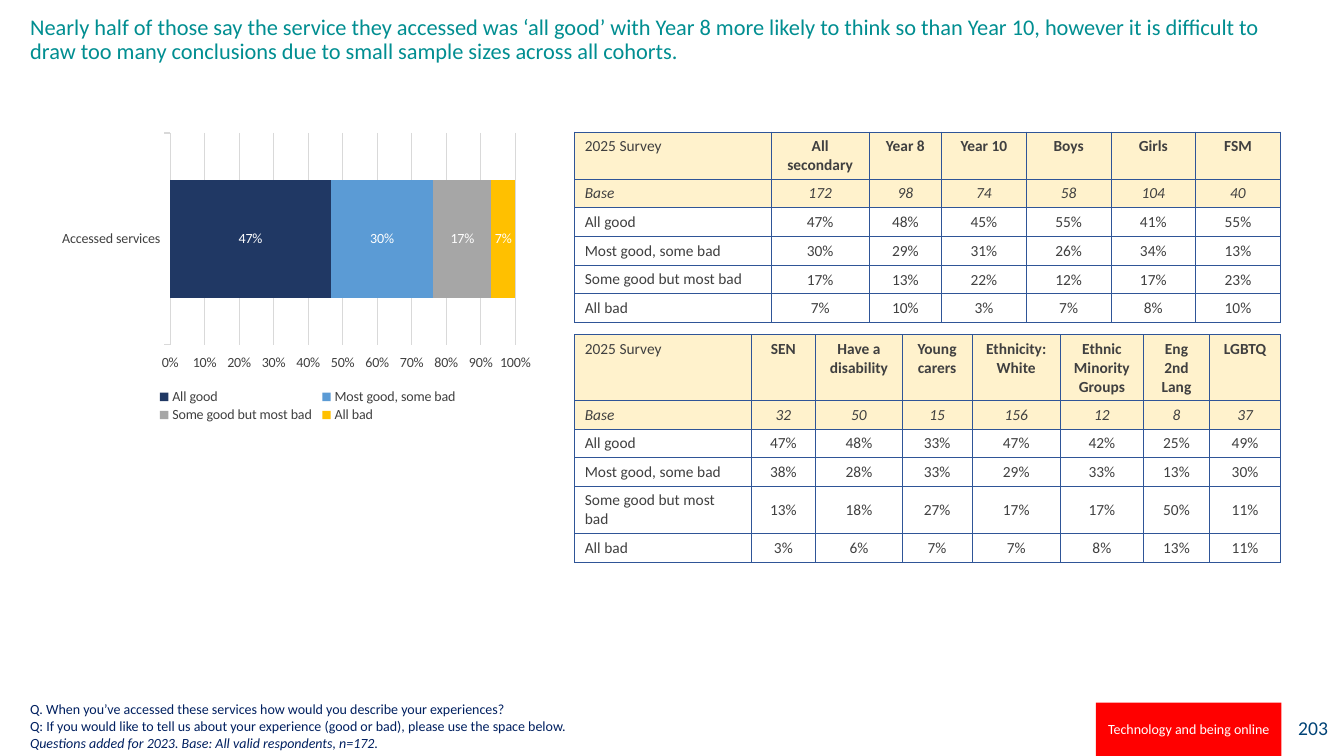
from lxml.etree import SubElement
from pptx import Presentation
from pptx.chart.data import CategoryChartData
from pptx.dml.color import RGBColor
from pptx.enum.chart import (XL_CHART_TYPE, XL_LABEL_POSITION,
                             XL_LEGEND_POSITION, XL_TICK_MARK)
from pptx.enum.shapes import MSO_SHAPE
from pptx.enum.text import MSO_ANCHOR, MSO_AUTO_SIZE, PP_ALIGN
from pptx.oxml.ns import qn
from pptx.util import Pt

PX = 9144  # EMU per px, at 100 px to the inch
FONT = "Calibri"
COLORS = {
    "title": "008E91", "note": "002060", "page": "004376", "text": "404040",
    "white": "FFFFFF", "section": "FF0000", "header": "FFF2CC",
    "border": "2F5597", "grid": "D9D9D9",
}
ANSWERS = {
    "All good": (0.47, "203864"),
    "Most good, some bad": (0.30, "5B9BD5"),
    "Some good but most bad": (0.17, "A6A6A6"),
    "All bad": (0.07, "FFC000"),
}
# Each group: heading, column width in px, base, then a percentage per answer
SCHOOL_GROUPS = [
    ("All secondary", 97, 172, 47, 30, 17, 7),
    ("Year 8", 72, 98, 48, 29, 13, 10),
    ("Year 10", 84, 74, 45, 31, 22, 3),
    ("Boys", 84, 58, 55, 26, 12, 7),
    ("Girls", 84, 104, 41, 34, 17, 8),
    ("FSM", 84, 40, 55, 13, 23, 10),
]
COHORT_GROUPS = [
    ("SEN", 64, 32, 47, 38, 13, 3),
    ("Have a disability", 86, 50, 48, 28, 18, 6),
    ("Young carers", 69, 15, 33, 33, 27, 7),
    ("Ethnicity: White", 88, 156, 47, 29, 17, 7),
    ("Ethnic Minority Groups", 82, 12, 42, 33, 17, 8),
    ("Eng 2nd Lang", 66, 8, 25, 13, 50, 13),
    ("LGBTQ", 70, 37, 49, 30, 11, 11),
]
ROW_HEIGHTS = [45, 27, 23, 23, 23, 23]


def box(*lengths):
    return [length * PX for length in lengths]


def rgb(name):
    return RGBColor.from_string(COLORS[name])


def style_font(font, size, color):
    font.name = FONT
    font.size = Pt(size)
    font.color.rgb = rgb(color)


def write(paragraph, text, size=11, color="text", bold=False, italic=False,
          align=PP_ALIGN.LEFT):
    paragraph.alignment = align
    run = paragraph.add_run()
    run.text = text
    style_font(run.font, size, color)
    run.font.bold = bold
    run.font.italic = italic


def add_title(slide, text):
    title = slide.shapes.title
    title.left, title.top, title.width, title.height = box(20, 11, 1270, 98)
    frame = title.text_frame
    frame.auto_size = MSO_AUTO_SIZE.NONE
    frame.vertical_anchor = MSO_ANCHOR.TOP
    frame.paragraphs[0].line_spacing = 0.9
    write(frame.paragraphs[0], text, size=16, color="title")


def add_label(slide, place, fill, text, **text_format):
    label = slide.shapes.add_shape(MSO_SHAPE.RECTANGLE, *box(*place))
    label.shadow.inherit = False
    label.fill.solid()
    label.fill.fore_color.rgb = rgb(fill)
    label.line.fill.background()
    label.text_frame.vertical_anchor = MSO_ANCHOR.MIDDLE
    write(label.text_frame.paragraphs[0], text, **text_format)


def add_notes(slide, place, notes):
    frame = slide.shapes.add_textbox(*box(*place)).text_frame
    frame.word_wrap = True
    frame.vertical_anchor = MSO_ANCHOR.BOTTOM
    for index, (text, italic) in enumerate(notes):
        paragraph = frame.add_paragraph() if index else frame.paragraphs[0]
        write(paragraph, text, size=10, color="note", italic=italic)


def set_layout(parent, index, x, y, w, h, target=None):
    """Give a plot area or legend a fixed place, as shares of the chart."""
    for old in parent.findall(qn("c:layout")):
        parent.remove(old)
    layout = SubElement(parent, qn("c:layout"))
    parent.insert(index, layout)
    manual = SubElement(layout, qn("c:manualLayout"))
    settings = {"layoutTarget": target} if target else {}
    settings |= {"xMode": "edge", "yMode": "edge", "x": x, "y": y, "w": w, "h": h}
    for tag, value in settings.items():
        SubElement(manual, qn(f"c:{tag}")).set("val", str(value))


def add_answer_chart(slide, place):
    data = CategoryChartData(number_format="0%")
    data.categories = ["Accessed services"]
    for answer, (share, _) in ANSWERS.items():
        data.add_series(answer, [share])
    chart = slide.shapes.add_chart(
        XL_CHART_TYPE.BAR_STACKED_100, *box(*place), data).chart
    style_font(chart.font, 10, "text")
    chart.has_title = False

    # Bars and their labels
    plot = chart.plots[0]
    plot.gap_width = 80
    plot.overlap = 100
    plot.vary_by_categories = False
    for series, (_, color) in zip(plot.series, ANSWERS.values()):
        series.format.fill.solid()
        series.format.fill.fore_color.rgb = RGBColor.from_string(color)
        labels = series.data_labels
        labels.show_value = True
        labels.number_format = "0%"
        labels.number_format_is_linked = False
        labels.position = XL_LABEL_POSITION.CENTER
        style_font(labels.font, 10, "white")

    # Axes
    shares, services = chart.value_axis, chart.category_axis
    shares.minimum_scale, shares.maximum_scale, shares.major_unit = 0, 1, 0.1
    shares.tick_labels.number_format = "0%"
    shares.tick_labels.number_format_is_linked = False
    shares.format.line.fill.background()
    for line in (shares.major_gridlines.format.line, services.format.line):
        line.color.rgb = rgb("grid")
        line.width = Pt(0.75)
    for axis in (shares, services):
        axis.major_tick_mark = XL_TICK_MARK.OUTSIDE
        style_font(axis.tick_labels.font, 10, "text")

    # Legend and plot area
    chart.has_legend = True
    legend = chart.legend
    legend.position = XL_LEGEND_POSITION.BOTTOM
    legend.include_in_layout = False
    style_font(legend.font, 10, "text")
    set_layout(legend._element, 1, 0.22, 0.86, 0.57, 0.13)
    plot_area = chart._chartSpace.chart.plotArea
    set_layout(plot_area, 0, 0.25, 0.01, 0.64, 0.71, target="inner")


def set_borders(cell):
    properties = cell._tc.get_or_add_tcPr()
    for index, side in enumerate(("lnL", "lnR", "lnT", "lnB")):
        line = SubElement(properties, qn(f"a:{side}"), w=str(Pt(0.5)))
        properties.insert(index, line)
        fill = SubElement(line, qn("a:solidFill"))
        SubElement(fill, qn("a:srgbClr"), val=COLORS["border"])


def add_survey_table(slide, place, label_width, groups):
    columns = [("2025 Survey", "Base", *ANSWERS)]
    for heading, _, base, *shares in groups:
        columns.append((heading, str(base), *(f"{share}%" for share in shares)))
    widths = [label_width] + [group[1] for group in groups]
    size = (sum(widths), sum(ROW_HEIGHTS))
    table = slide.shapes.add_table(
        len(ROW_HEIGHTS), len(columns), *box(*place, *size)).table
    table.first_row = table.horz_banding = False
    for row, height in zip(table.rows, ROW_HEIGHTS):
        row.height = height * PX
    for c, (column, width) in enumerate(zip(columns, widths)):
        table.columns[c].width = width * PX
        for r, text in enumerate(column):
            cell = table.cell(r, c)
            cell.vertical_anchor = MSO_ANCHOR.MIDDLE if r else MSO_ANCHOR.TOP
            if r < 2:
                cell.fill.solid()
                cell.fill.fore_color.rgb = rgb("header")
            else:
                cell.fill.background()
            if r > 1 and c:
                cell.margin_left = cell.margin_top = cell.margin_right = PX
                cell.margin_bottom = 0
            set_borders(cell)
            write(cell.text_frame.paragraphs[0], text, bold=r == 0 and c > 0,
                  italic=r == 1, align=PP_ALIGN.CENTER if c else PP_ALIGN.LEFT)


def main():
    deck = Presentation()
    deck.slide_width, deck.slide_height = box(1333, 750)
    slide = deck.slides.add_slide(deck.slide_layouts[5])
    add_label(slide, (1268, 695, 59, 54), "white", "203",
              size=14, color="page", align=PP_ALIGN.RIGHT)
    add_title(slide, "Nearly half of those say the service they accessed was "
              "‘all good’ with Year 8 more likely to think so than Year 10, "
              "however it is difficult to draw too many conclusions due to "
              "small sample sizes across all cohorts.")
    add_answer_chart(slide, (35, 129, 535, 296))
    add_notes(slide, (20, 690, 773, 60), [
        ("Q. When you’ve accessed these services how would you describe your "
         "experiences?", False),
        ("Q: If you would like to tell us about your experience (good or bad), "
         "please use the space below.", False),
        ("Questions added for 2023. Base: All valid respondents, n=172.", True),
    ])
    add_survey_table(slide, (570, 131), 195, SCHOOL_GROUPS)
    add_survey_table(slide, (570, 332), 175, COHORT_GROUPS)
    add_label(slide, (1087, 697, 184, 53), "section",
              "Technology and being online",
              size=10, color="white", align=PP_ALIGN.CENTER)
    deck.save("out.pptx")


if __name__ == "__main__":
    main()
